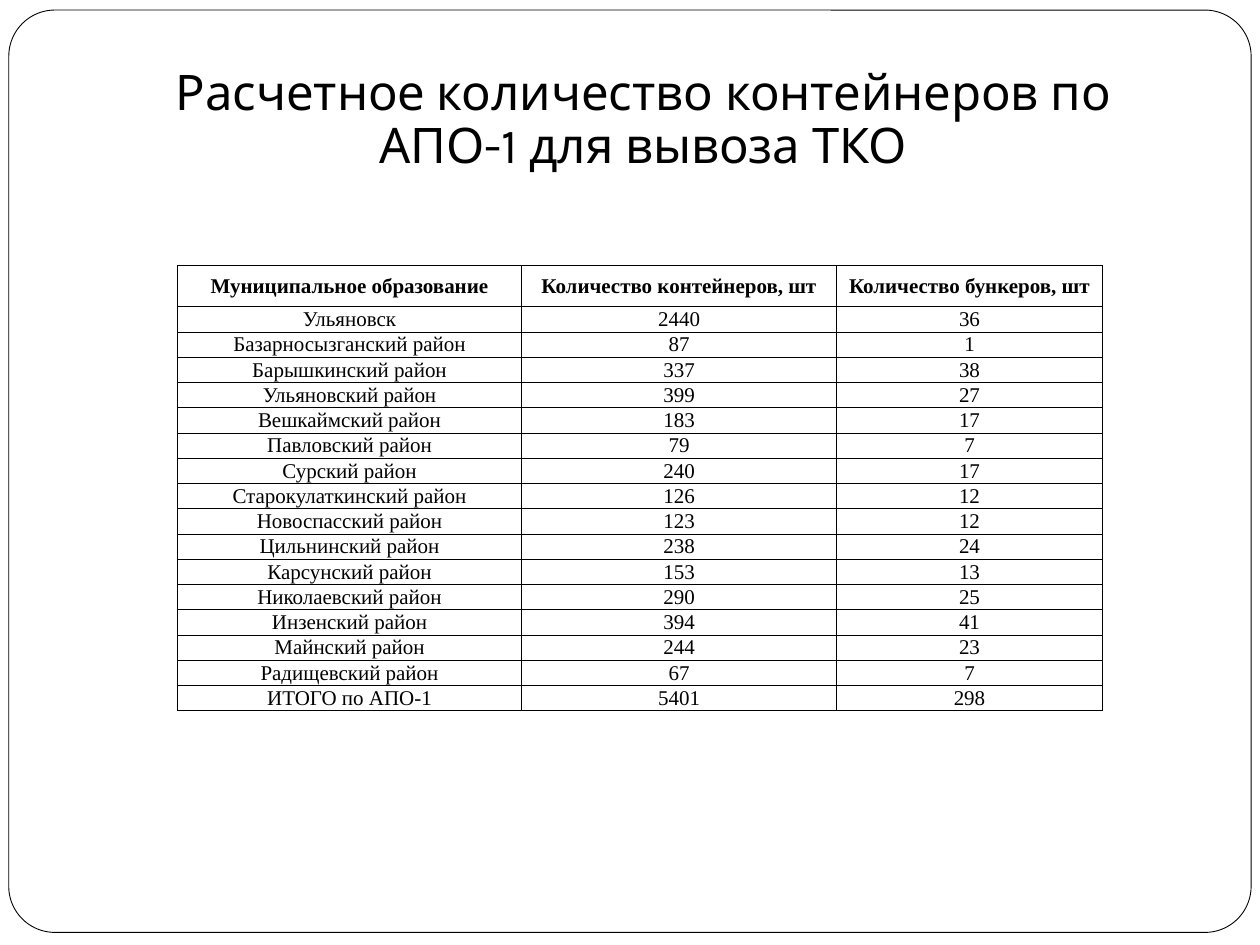
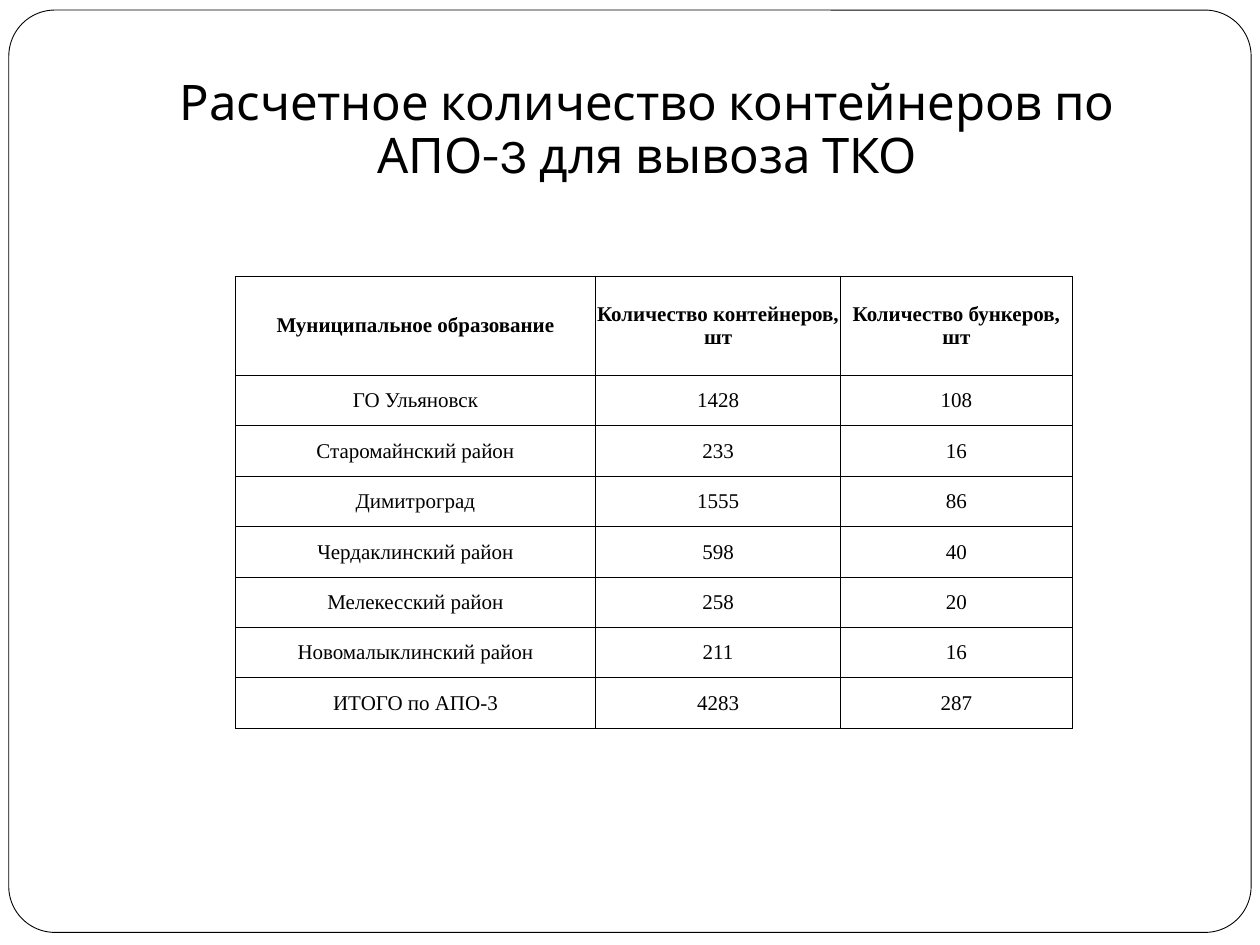
from lxml import etree
from pptx import Presentation
from pptx import util as u
from pptx.dml.color import RGBColor
from pptx.enum import shapes, text
from pptx.oxml import ns

COLORS = {"paper": "FFFFFF", "ink": "000000"}
TITLE_FONT, TABLE_FONT = "Karla", "Times New Roman"
LINE_PT = 0.5

# The slide is a grid of 100 columns by 75 rows
WIDTH, HEIGHT = u.Inches(10), u.Inches(7.5)
COLS, ROWS = 100, 75

HEADER = ("Муниципальное образование", "Количество контейнеров, шт",
          "Количество бункеров, шт")
TITLE = "Расчетное количество контейнеров по {} для вывоза ТКО"

ZONES = [
    {
        "zone": "АПО-1",
        "title_box": (9.4, 5.5, 83.3, 9.3),
        "table_box": (14.1, 21.1, 73.4, 34),
        "col_weights": (27.3, 25, 21.1),
        "header_rows": 3.25,
        "data": [
            ("Ульяновск", 2440, 36),
            ("Базарносызганский район", 87, 1),
            ("Барышкинский район", 337, 38),
            ("Ульяновский район", 399, 27),
            ("Вешкаймский район", 183, 17),
            ("Павловский район", 79, 7),
            ("Сурский район", 240, 17),
            ("Старокулаткинский район", 126, 12),
            ("Новоспасский район", 123, 12),
            ("Цильнинский район", 238, 24),
            ("Карсунский район", 153, 13),
            ("Николаевский район", 290, 25),
            ("Инзенский район", 394, 41),
            ("Майнский район", 244, 23),
            ("Радищевский район", 67, 7),
            ("ИТОГО по АПО-1", 5401, 298),
        ],
    },
    {
        "zone": "АПО-3",
        "title_box": (10.9, 3.1, 80.9, 12.5),
        "table_box": (18.7, 21.9, 66.4, 35.9),
        "col_weights": (28.6, 19.5, 18.4),
        "header_rows": 7.9,
        "data": [
            ("ГО Ульяновск", 1428, 108),
            ("Старомайнский район", 233, 16),
            ("Димитроград", 1555, 86),
            ("Чердаклинский район", 598, 40),
            ("Мелекесский район", 258, 20),
            ("Новомалыклинский район", 211, 16),
            ("ИТОГО по АПО-3", 4283, 287),
        ],
    },
]


def rgb(name):
    return RGBColor.from_string(COLORS[name])


def across(cols):
    return u.Emu(round(WIDTH * cols / COLS))


def down(rows):
    return u.Emu(round(HEIGHT * rows / ROWS))


def place(box):
    x, y, w, h = box
    return across(x), down(y), across(w), down(h)


def write(tf, content, font, size, spacing, bold=False):
    tf.text = content
    tf.word_wrap = True
    p = tf.paragraphs[0]
    p.alignment = text.PP_ALIGN.CENTER
    p.line_spacing = spacing
    r = p.runs[0]
    r.font.name, r.font.size, r.font.bold = font, u.Pt(size), bold
    r.font.color.rgb = rgb("ink")


def add_frame(s, box):
    sp = s.shapes.add_shape(shapes.MSO_SHAPE.ROUNDED_RECTANGLE, *place(box))
    sp.adjustments[0] = 0.05
    sp.shadow.inherit = False
    sp.fill.solid()
    sp.fill.fore_color.rgb = rgb("paper")
    sp.line.color.rgb = rgb("ink")
    sp.line.width = u.Pt(LINE_PT)


def add_title(s, box, content):
    tf = s.shapes.add_textbox(*place(box)).text_frame
    tf.vertical_anchor = text.MSO_ANCHOR.BOTTOM
    tf.margin_left = tf.margin_right = tf.margin_bottom = across(1)
    tf.margin_top = down(0.5)
    write(tf, content, TITLE_FONT, 28, 0.9)


def add_borders(cell):
    tcPr = cell._tc.get_or_add_tcPr()
    for side in ("a:lnL", "a:lnR", "a:lnT", "a:lnB"):
        ln = etree.SubElement(tcPr, ns.qn(side), w=str(u.Pt(LINE_PT)))
        fill = etree.SubElement(ln, ns.qn("a:solidFill"))
        etree.SubElement(fill, ns.qn("a:srgbClr"), val=COLORS["ink"])


def style_cell(cell, content, bold):
    cell.margin_left = cell.margin_right = across(0.1)
    cell.margin_top, cell.margin_bottom = down(0.1), 0
    cell.vertical_anchor = text.MSO_ANCHOR.MIDDLE
    write(cell.text_frame, str(content), TABLE_FONT, 12, 0.95, bold)
    add_borders(cell)
    cell.fill.solid()
    cell.fill.fore_color.rgb = rgb("paper")


def add_count_table(s, box, col_weights, header_rows, data):
    records = [HEADER, *data]
    table = s.shapes.add_table(len(records), len(HEADER), *place(box)).table
    table.first_row = table.horz_banding = False
    _, _, w, h = box

    # Columns share the width; body rows share what the header leaves
    for col, weight in zip(table.columns, col_weights):
        col.width = across(w * weight / sum(col_weights))
    body_rows = (h - header_rows) / len(data)
    for i, record in enumerate(records):
        table.rows[i].height = down(body_rows if i else header_rows)
        for j, content in enumerate(record):
            style_cell(table.cell(i, j), content, bold=i == 0)


def add_zone_slide(prs, zone):
    s = prs.slides.add_slide(prs.slide_layouts[6])
    add_frame(s, (0.7, 0.8, 98.6, 73.2))
    add_title(s, zone["title_box"], TITLE.format(zone["zone"]))
    add_count_table(s, zone["table_box"], zone["col_weights"],
                    zone["header_rows"], zone["data"])


def main():
    prs = Presentation()
    prs.slide_width, prs.slide_height = WIDTH, HEIGHT
    for zone in ZONES:
        add_zone_slide(prs, zone)
    prs.save("out.pptx")


if __name__ == "__main__":
    main()
